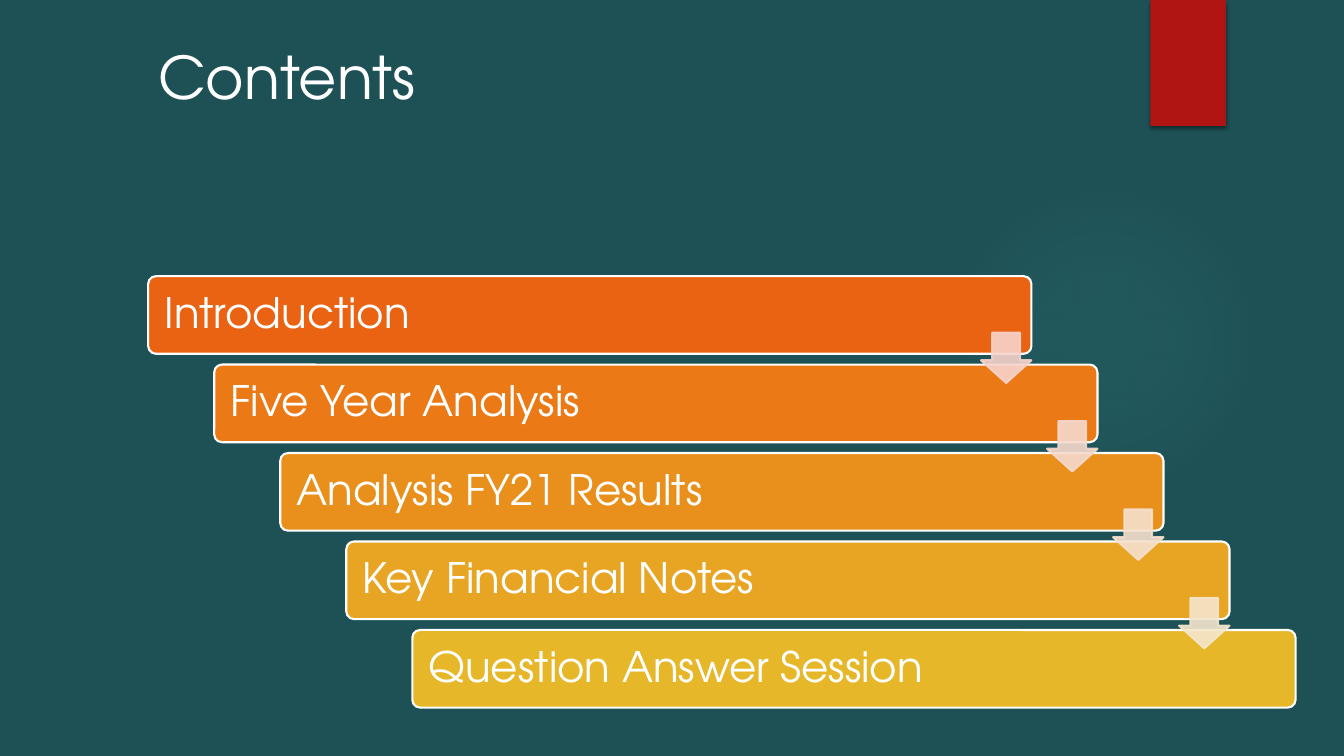
from lxml import etree
from pptx import Presentation
from pptx.dml.color import RGBColor
from pptx.enum.shapes import MSO_SHAPE
from pptx.enum.text import MSO_ANCHOR, PP_ALIGN
from pptx.oxml import parse_xml
from pptx.oxml.ns import nsdecls, qn
from pptx.util import Inches, Pt

OVAL, RECT = MSO_SHAPE.OVAL, MSO_SHAPE.RECTANGLE
ROUNDED, DOWN_ARROW = MSO_SHAPE.ROUNDED_RECTANGLE, MSO_SHAPE.DOWN_ARROW
MIDDLE, LEFT = MSO_ANCHOR.MIDDLE, PP_ALIGN.LEFT

FONT = "TeX Gyre Adventor"
WHITE, TEAL, RED, GLOW = "FFFFFF", "1E5155", "B01513", "50B9C1"
TOPICS = [
    ("Introduction", "EA6312"),
    ("Five Year Analysis", "EB7A16"),
    ("Analysis FY21 Results", "E9901C"),
    ("Key Financial Notes", "E8A423"),
    ("Question Answer Session", "E6B729"),
]
ARROW_COLORS = ["F7D3CC", "F6D9CD", "F6E0CD", "F5E6CD"]
BAR_WIDTH, BAR_HEIGHT = 8.76, 0.77
ARROW_SIZE, ARROW_DROP = 0.5, 0.56
BAR_FRAME = {
    "word_wrap": True,
    "vertical_anchor": MIDDLE,
    "margin_left": Inches(0.14),
    "margin_right": Inches(0.14),
}


def rgb(color):
    return RGBColor.from_string(color)


def set_attributes(target, values):
    for name, value in values.items():
        setattr(target, name, value)


def add_figure(slide, preset, box, color, outline=None, adjustments=()):
    figure = slide.shapes.add_shape(preset, *map(Inches, box))
    figure.shadow.inherit = False
    figure.fill.solid()
    figure.fill.fore_color.rgb = rgb(color)
    if outline:
        figure.line.color.rgb = rgb(outline)
        figure.line.width = Pt(1.5)
    else:
        figure.line.fill.background()
    for index, value in enumerate(adjustments):
        figure.adjustments[index] = value
    return figure


def write(frame, text, size, line_spacing=1.0):
    paragraph = frame.paragraphs[0]
    set_attributes(paragraph, {"alignment": LEFT, "line_spacing": line_spacing})
    run = paragraph.add_run()
    run.text = text
    set_attributes(run.font, {"name": FONT, "size": Pt(size)})
    run.font.color.rgb = rgb(WHITE)


def set_opacity(figure, percent):
    for color in figure.element.spPr.iter(qn("a:srgbClr")):
        etree.SubElement(color, qn("a:alpha"), val=str(percent * 1000))


def add_glow(slide, box):
    """Draw a faint disc that fades out from its centre."""
    glow = add_figure(slide, OVAL, box, GLOW)
    stops = "".join(
        f'<a:gs pos="{position * 1000}"><a:srgbClr val="{GLOW}">'
        f'<a:alpha val="{opacity * 1000}"/></a:srgbClr></a:gs>'
        for position, opacity in [(0, 7), (36, 6), (69, 0), (100, 0)]
    )
    gradient = parse_xml(
        f'<a:gradFill {nsdecls("a")}><a:gsLst>{stops}</a:gsLst><a:path path="circle">'
        '<a:fillToRect l="50000" t="50000" r="50000" b="50000"/></a:path></a:gradFill>'
    )
    properties = glow.element.spPr
    properties.replace(properties.find(qn("a:solidFill")), gradient)


def add_ribbon(slide, box):
    ribbon = add_figure(slide, RECT, box, RED)
    ribbon.element.spPr.find(qn("a:effectLst")).append(parse_xml(
        f'<a:outerShdw {nsdecls("a")} blurRad="{Pt(3)}" dist="{Pt(2)}" dir="5400000" '
        'rotWithShape="0"><a:srgbClr val="000000"><a:alpha val="45000"/></a:srgbClr>'
        '</a:outerShdw>'
    ))


def add_title(slide, box, text):
    frame = slide.shapes.add_textbox(*map(Inches, box)).text_frame
    frame.word_wrap = True
    write(frame, text, 42)


def add_staircase(slide, box):
    """Spread the topic bars diagonally over the box, an arrow from each to the next."""
    left, top, width, height = box
    steps = len(TOPICS) - 1
    step_x, step_y = (width - BAR_WIDTH) / steps, (height - BAR_HEIGHT) / steps

    for index, (topic, color) in enumerate(TOPICS):
        bar_box = (left + index * step_x, top + index * step_y, BAR_WIDTH, BAR_HEIGHT)
        bar = add_figure(slide, ROUNDED, bar_box, color, WHITE, [0.1])
        set_attributes(bar.text_frame, BAR_FRAME)
        write(bar.text_frame, topic, 30, 0.9)

    for index, color in enumerate(ARROW_COLORS):
        arrow_box = (
            left + index * step_x + BAR_WIDTH - ARROW_SIZE,
            top + index * step_y + ARROW_DROP,
            ARROW_SIZE,
            ARROW_SIZE,
        )
        # The preset lists the shaft width first, then the head length.
        arrow = add_figure(slide, DOWN_ARROW, arrow_box, color, color, [0.55, 0.45])
        set_opacity(arrow, 90)


def main():
    deck = Presentation()
    deck.slide_width, deck.slide_height = Inches(13.33), Inches(7.5)
    slide = deck.slides.add_slide(deck.slide_layouts[6])
    slide.background.fill.solid()
    slide.background.fill.fore_color.rgb = rgb(TEAL)

    add_glow(slide, (9.41, 1.83, 3.08, 3.08))
    add_ribbon(slide, (11.41, 0, 0.75, 1.25))
    add_title(slide, (1.47, 0.35, 11.38, 1.38), "Contents")
    add_staircase(slide, (1.47, 2.74, 11.38, 4.28))
    deck.save("out.pptx")


if __name__ == "__main__":
    main()
